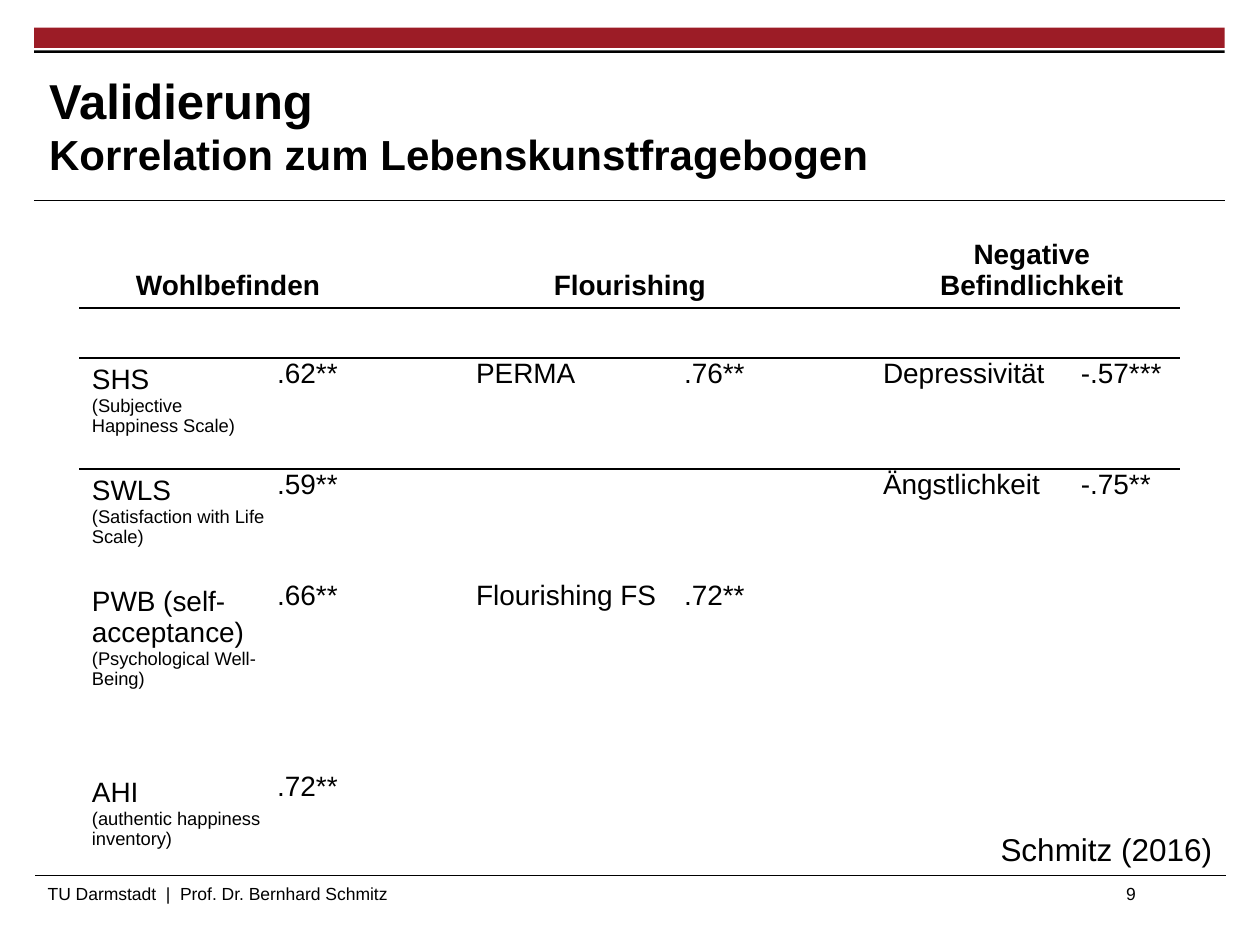
from dataclasses import dataclass

from lxml.etree import SubElement
from pptx import Presentation
from pptx.dml.color import RGBColor
from pptx.enum.shapes import MSO_CONNECTOR, MSO_SHAPE
from pptx.enum.text import MSO_ANCHOR, MSO_AUTO_SIZE, PP_ALIGN
from pptx.oxml.ns import qn
from pptx.util import Inches, Pt

FONT = "Arial"
BLACK, WHITE, RED = "000000", "FFFFFF", "9C1C26"
NO_STYLE = "{2D5ABB26-0587-4C30-8999-92F81FD0307C}"
COL_WIDTHS = [1.57, 0.79, 0.79, 1.65, 0.79, 0.79, 1.57, 0.79]
ROW_HEIGHTS = [0.63, 0.4, 0.88, 0.88, 1.15, 0.37, 0.84]
HEADINGS = {0: "Wohlbefinden", 3: "Flourishing", 6: "Negative Befindlichkeit"}
LAST_ROW = len(ROW_HEIGHTS) - 1


@dataclass
class Measure:
    """One scale with its correlation; col is the column of its name."""
    row: int
    col: int
    name: str
    value: str
    long_name: str = ""


MEASURES = [
    Measure(2, 0, "SHS", ".62**", "(Subjective Happiness Scale)"),
    Measure(3, 0, "SWLS", ".59**", "(Satisfaction with Life Scale)"),
    Measure(4, 0, "PWB (self-acceptance)", ".66**", "(Psychological Well-Being)"),
    Measure(6, 0, "AHI", ".72**", "(authentic happiness inventory)"),
    Measure(2, 3, "PERMA", ".76**"),
    Measure(4, 3, "Flourishing FS", ".72**"),
    Measure(2, 6, "Depressivität", "-.57***"),
    Measure(3, 6, "Ängstlichkeit", "-.75**"),
]


def rgb(color: str) -> RGBColor:
    return RGBColor.from_string(color)


def add_run(p, text: str, size: float, bold: bool = False) -> None:
    r = p.add_run()
    r.text = text
    r.font.name, r.font.size, r.font.bold = FONT, Pt(size), bold
    r.font.color.rgb = rgb(BLACK)


def clear_margins(frame) -> None:
    """Remove the inner margins of a text frame or a table cell."""
    frame.margin_left = frame.margin_right = 0
    frame.margin_top = frame.margin_bottom = 0


def add_bar(slide, top: float, height: float, color: str) -> None:
    sp = slide.shapes.add_shape(MSO_SHAPE.RECTANGLE, Inches(0.27), Inches(top),
                                Inches(9.45), Inches(height))
    sp.shadow.inherit = False
    sp.fill.solid()
    sp.fill.fore_color.rgb = rgb(color)
    sp.line.fill.background()


def add_rule(slide, left: float, y: float) -> None:
    line = slide.shapes.add_connector(MSO_CONNECTOR.STRAIGHT, Inches(left), Inches(y),
                                      Inches(left + 9.45), Inches(y))
    line.line.color.rgb = rgb(BLACK)
    line.line.width = Pt(0.6)
    SubElement(line._element.spPr, qn("a:effectLst"))


def add_text_box(slide, left: float, top: float, width: float, height: float):
    """Add a wrapping text box and return its first paragraph."""
    tf = slide.shapes.add_textbox(Inches(left), Inches(top),
                                  Inches(width), Inches(height)).text_frame
    tf.word_wrap = True
    return tf.paragraphs[0]


def add_title(slide) -> None:
    title = slide.shapes.title
    title.left, title.top = Inches(0.39), Inches(0.53)
    title.width, title.height = Inches(7.26), Inches(0.92)
    tf = title.text_frame
    clear_margins(tf)
    tf.auto_size = MSO_AUTO_SIZE.NONE
    tf.vertical_anchor = MSO_ANCHOR.MIDDLE
    p = tf.paragraphs[0]
    p.alignment = PP_ALIGN.LEFT
    add_run(p, "Validierung", 28, True)
    p.add_line_break()
    add_run(p, "Korrelation zum Lebenskunstfragebogen", 24, True)


def add_footer(slide) -> None:
    p = add_text_box(slide, 0.28, 6.96, 9.45, 0.41)
    tabs = SubElement(p._p.get_or_add_pPr(), qn("a:tabLst"))
    SubElement(tabs, qn("a:tab"), pos=str(Inches(8.56)), algn="l")
    add_run(p, "TU Darmstadt  |  Prof. Dr. Bernhard Schmitz\t9", 10)


def add_border(cell, side: str, color: str, width: float = 1) -> None:
    ln = SubElement(cell._tc.get_or_add_tcPr(), qn(f"a:ln{side}"), w=str(Pt(width)))
    fill = SubElement(ln, qn("a:solidFill"))
    SubElement(fill, qn("a:srgbClr"), val=color)


def format_cell(cell, row: int) -> None:
    """Set the borders, then the fill, that belong to a row."""
    if row == 0:
        add_border(cell, "T", WHITE)
        add_border(cell, "B", BLACK)
    elif row == 1:
        add_border(cell, "T", BLACK)
        add_border(cell, "B", BLACK, 1.5)
    elif row == 2:
        add_border(cell, "T", BLACK, 1.5)
    elif row == LAST_ROW:
        add_border(cell, "B", WHITE)
    if row % 2:
        cell.fill.solid()
        cell.fill.fore_color.rgb = rgb(WHITE)
        color = cell._tc.tcPr.find(qn("a:solidFill"))[0]
        SubElement(color, qn("a:alpha"), val="20000")
    else:
        cell.fill.background()
    cell.text_frame.paragraphs[0].font.size = Pt(16)


def add_measure(table, m: Measure) -> None:
    name, value = table.cell(m.row, m.col), table.cell(m.row, m.col + 1)
    clear_margins(value)
    add_run(value.text_frame.paragraphs[0], m.value, 16)
    add_run(name.text_frame.paragraphs[0], m.name, 16)
    if m.long_name:
        add_run(name.text_frame.add_paragraph(), m.long_name, 10.5)
    else:
        clear_margins(name)


def add_correlation_table(slide) -> None:
    frame = slide.shapes.add_table(len(ROW_HEIGHTS), len(COL_WIDTHS), Inches(0.63),
                                   Inches(1.81), Inches(8.74), Inches(sum(ROW_HEIGHTS)))
    table = frame.table
    table.first_row = table.horz_banding = False
    table._tbl.tblPr.find(qn("a:tableStyleId")).text = NO_STYLE
    for column, width in zip(table.columns, COL_WIDTHS):
        column.width = Inches(width)
    for i, height in enumerate(ROW_HEIGHTS):
        table.rows[i].height = Inches(height)
        for cell in table.rows[i].cells:
            format_cell(cell, i)
    for col, heading in HEADINGS.items():
        cell = table.cell(0, col)
        cell.merge(table.cell(0, col + 1))
        cell.vertical_anchor = MSO_ANCHOR.BOTTOM
        p = cell.text_frame.paragraphs[0]
        p.alignment = PP_ALIGN.CENTER
        add_run(p, heading, 16, True)
    for m in MEASURES:
        add_measure(table, m)


def main() -> None:
    prs = Presentation()
    prs.slide_width, prs.slide_height = Inches(10), Inches(7.5)
    slide = prs.slides.add_slide(prs.slide_layouts[5])
    add_bar(slide, 0.22, 0.16, RED)
    add_rule(slide, 0.27, 1.59)
    add_bar(slide, 0.4, 0.02, BLACK)
    add_rule(slide, 0.28, 6.95)
    add_footer(slide)
    add_title(slide)
    add_correlation_table(slide)
    p = add_text_box(slide, 5.31, 6.54, 4.41, 0.4)
    p.alignment = PP_ALIGN.RIGHT
    add_run(p, "Schmitz (2016)", 18)
    prs.save("out.pptx")


if __name__ == "__main__":
    main()
